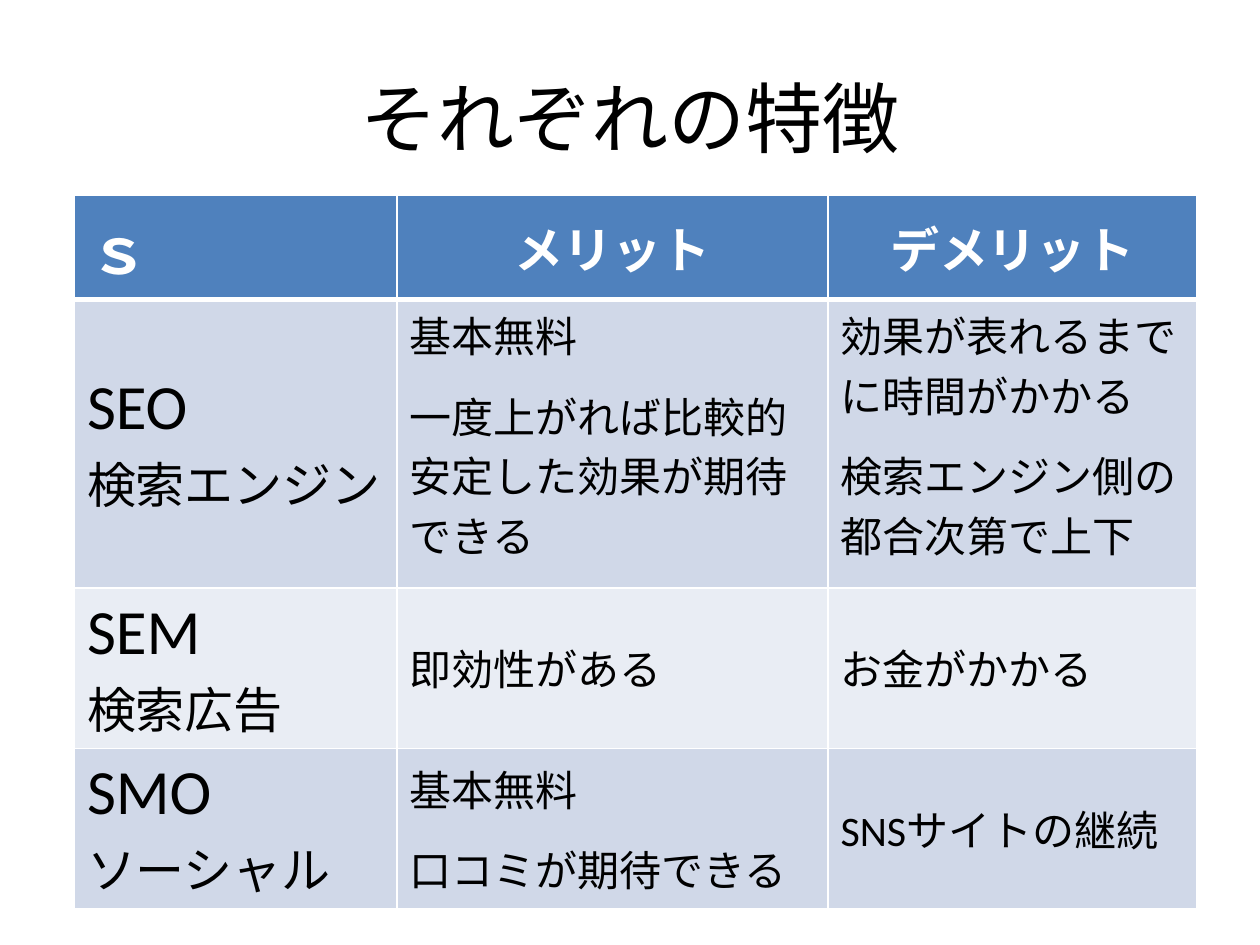
from dataclasses import dataclass

from lxml.etree import SubElement
from pptx import Presentation
from pptx.dml.color import RGBColor
from pptx.enum.text import MSO_ANCHOR, PP_ALIGN
from pptx.oxml.ns import qn
from pptx.util import Cm, Pt


@dataclass(frozen=True)
class Theme:
    font: str = "Calibri"
    text: str = "000000"
    light: str = "FFFFFF"
    header: str = "4F81BD"
    bands: tuple = ("D0D8E8", "E9EDF4")
    title_size: int = 44
    term_size: int = 36
    label_size: int = 28
    body_size: int = 24


def apply_format(target, values):
    for name, value in values.items():
        setattr(target, name, value)


class SlideBuilder:
    def __init__(self, presentation, theme):
        self.theme = theme
        self.slide = presentation.slides.add_slide(presentation.slide_layouts[5])

    def add_text(self, text_frame, lines, color, bold=False, **paragraph_format):
        for index, (text, size) in enumerate(lines):
            paragraph = text_frame.paragraphs[0] if index == 0 else text_frame.add_paragraph()
            values = dict(paragraph_format)
            if index == 0:
                values.pop("space_before", None)
            apply_format(paragraph, values)
            run = paragraph.add_run()
            run.text = text
            apply_format(run.font, {"name": self.theme.font, "size": Pt(size), "bold": bold})
            run.font.color.rgb = RGBColor.from_string(color)

    def title(self, text):
        shape = self.slide.shapes.title
        apply_format(shape, {"left": Cm(1.27), "top": Cm(0.76), "width": Cm(22.86), "height": Cm(3.18)})
        shape.text_frame.vertical_anchor = MSO_ANCHOR.MIDDLE
        self.add_text(shape.text_frame, [(text, self.theme.title_size)], self.theme.text,
                      alignment=PP_ALIGN.CENTER)

    def borders(self, cell, widths):
        properties = cell._tc.get_or_add_tcPr()
        for index, (side, width) in enumerate(widths.items()):
            line = SubElement(properties, qn(f"a:ln{side}"), w=str(Pt(width)))
            fill = SubElement(line, qn("a:solidFill"))
            SubElement(fill, qn("a:srgbClr"), val=self.theme.light)
            properties.insert(index, line)

    def cell(self, table, row, column, lines):
        theme = self.theme
        cell = table.cell(row, column)
        cell.fill.solid()
        is_header = row == 0
        color = theme.header if is_header else theme.bands[(row - 1) % 2]
        cell.fill.fore_color.rgb = RGBColor.from_string(color)
        self.borders(cell, {"L": 1, "R": 1, "T": 3 if row == 1 else 1, "B": 3 if is_header else 1})
        at_top = (row, column) in ((0, 0), (1, 1), (1, 2))
        cell.vertical_anchor = MSO_ANCHOR.TOP if at_top else MSO_ANCHOR.MIDDLE
        values = {}
        if is_header and column:
            values = {"alignment": PP_ALIGN.CENTER}
        elif column:
            values = {"line_spacing": Pt(34), "space_before": Pt(6), "space_after": Pt(6)}
        self.add_text(cell.text_frame, lines, theme.light if is_header else theme.text,
                      is_header, **values)

    def table(self, left, top, widths, heights, rows):
        frame = self.slide.shapes.add_table(len(heights), len(widths), Cm(left), Cm(top),
                                            Cm(sum(widths)), Cm(sum(heights)))
        table = frame.table
        for column, width in zip(table.columns, widths):
            column.width = Cm(width)
        for row, height in zip(table.rows, heights):
            row.height = Cm(height)
        for row, cells in enumerate(rows):
            for column, lines in enumerate(cells):
                self.cell(table, row, column, lines)


def main():
    presentation = Presentation()
    apply_format(presentation, {"slide_width": Cm(25.4), "slide_height": Cm(19.05)})
    theme = Theme()
    builder = SlideBuilder(presentation, theme)
    builder.title("それぞれの特徴")

    headings = [
        [("ｓ", theme.term_size)],
        [("メリット", theme.label_size)],
        [("デメリット", theme.label_size)],
    ]
    features = [
        ("SEO", "検索エンジン",
         ["基本無料", "一度上がれば比較的安定した効果が期待できる"],
         ["効果が表れるまでに時間がかかる", "検索エンジン側の都合次第で上下"]),
        ("SEM", "検索広告", ["即効性がある"], ["お金がかかる"]),
        ("SMO", "ソーシャル", ["基本無料", "口コミが期待できる"], ["SNSサイトの継続"]),
    ]
    rows = [headings]
    for term, label, merits, demerits in features:
        rows.append([
            [(term, theme.term_size), (label, theme.label_size)],
            [(text, theme.body_size) for text in merits],
            [(text, theme.body_size) for text in demerits],
        ])
    builder.table(1.5, 3.94, [6.5, 8.69, 7.44], [2.05, 5.82, 3.23, 3.23], rows)
    presentation.save("out.pptx")


if __name__ == "__main__":
    main()
